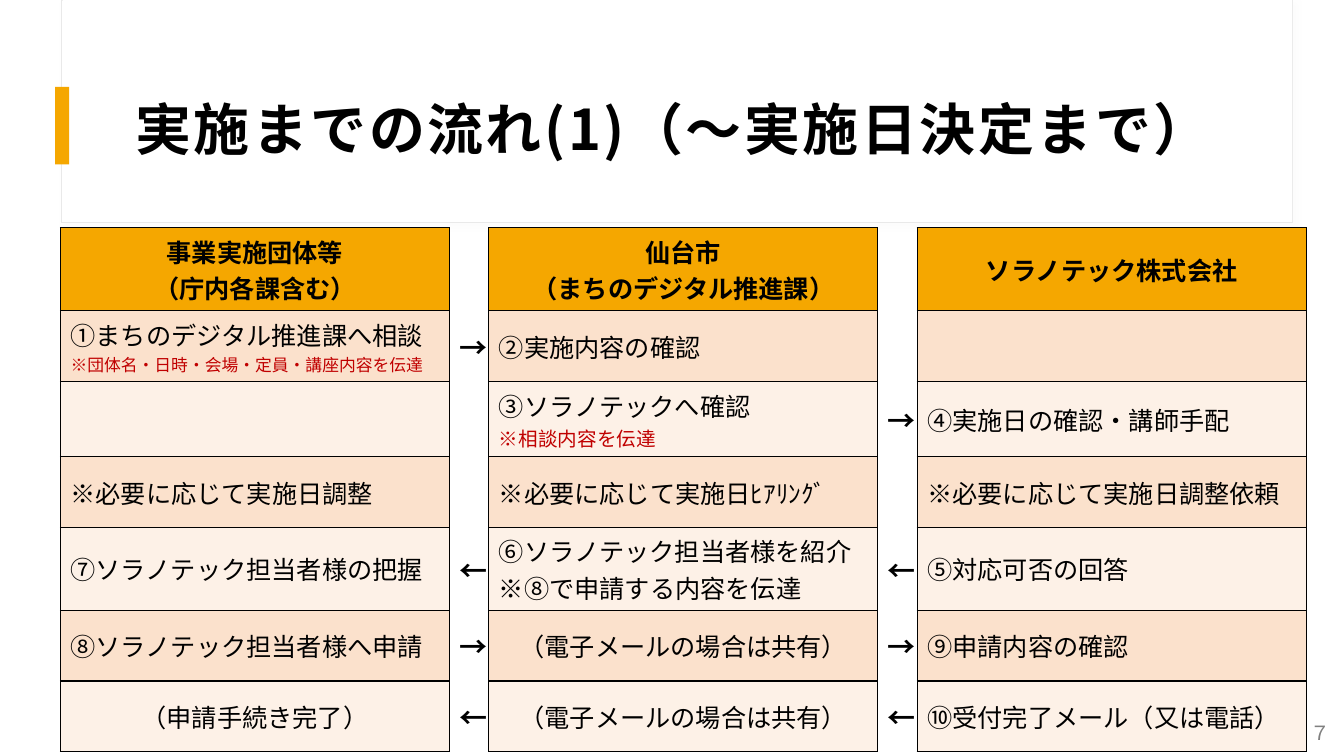
from collections import namedtuple
from dataclasses import dataclass

from lxml import etree
from pptx import Presentation
from pptx.dml.color import RGBColor
from pptx.enum.shapes import MSO_SHAPE
from pptx.enum.text import MSO_ANCHOR, PP_ALIGN
from pptx.oxml.ns import qn
from pptx.util import Pt

RECTANGLE = MSO_SHAPE.RECTANGLE
MIDDLE = MSO_ANCHOR.MIDDLE
LEFT, CENTER, RIGHT = PP_ALIGN.LEFT, PP_ALIGN.CENTER, PP_ALIGN.RIGHT


@dataclass(frozen=True)
class Theme:
    font: str = "Noto Sans CJK JP"
    black: str = "000000"
    white: str = "FFFFFF"
    accent: str = "F5A700"
    band_dark: str = "FBE1CC"
    band_light: str = "FDF1E7"
    note: str = "C00000"
    frame: str = "E9E9E9"
    shadow: str = "D9D9D9"
    page_number: str = "808080"
    title_size: int = 40
    arrow_size: int = 20
    body_size: int = 18
    number_size: int = 14


THEME = Theme()
Box = namedtuple("Box", "left top width height")
Line = namedtuple("Line", "text size color bold align")


def body(text):
    align = CENTER if text.startswith("（") else LEFT
    return Line(text, THEME.body_size, THEME.black, False, align)


def heading(text):
    return Line(text, THEME.body_size, THEME.black, True, CENTER)


def note(text, size):
    return Line(text, size, THEME.note, False, LEFT)


def arrow(text):
    return Line(text, THEME.arrow_size, THEME.black, True, CENTER)


HEADINGS = [
    [heading("事業実施団体等"), heading("（庁内各課含む）")],
    [],
    [heading("仙台市"), heading("（まちのデジタル推進課）")],
    [],
    [heading("ソラノテック株式会社")],
]
STEPS = [
    [[body("①まちのデジタル推進課へ相談"),
      note("※団体名・日時・会場・定員・講座内容を伝達", 12)],
     [arrow("→")], [body("②実施内容の確認")], [], []],
    [[], [], [body("③ソラノテックへ確認"), note("※相談内容を伝達", 14)],
     [arrow("→")], [body("④実施日の確認・講師手配")]],
    [[body("※必要に応じて実施日調整")], [],
     [body("※必要に応じて実施日ﾋｱﾘﾝｸﾞ")], [],
     [body("※必要に応じて実施日調整依頼")]],
    [[body("⑦ソラノテック担当者様の把握")], [arrow("←")],
     [body("⑥ソラノテック担当者様を紹介"), body("※⑧で申請する内容を伝達")],
     [arrow("←")], [body("⑤対応可否の回答")]],
    [[body("⑧ソラノテック担当者様へ申請")], [arrow("→")],
     [body("（電子メールの場合は共有）")], [arrow("→")],
     [body("⑨申請内容の確認")]],
    [[body("（申請手続き完了）")], [arrow("←")],
     [body("（電子メールの場合は共有）")], [arrow("←")],
     [body("⑩受付完了メール（又は電話）")]],
]


def points(box):
    return [Pt(length) for length in box]


def write_lines(frame, lines):
    for index, line in enumerate(lines):
        para = frame.add_paragraph() if index else frame.paragraphs[0]
        para.alignment = line.align
        span = para.add_run()
        span.text = line.text
        span.font.size = Pt(line.size)
        span.font.bold = line.bold
        span.font.color.rgb = RGBColor.from_string(line.color)
        span.font.name = THEME.font
        east_asian = etree.SubElement(span.font._element, qn("a:ea"))
        east_asian.set("typeface", THEME.font)


def add_text(page, box, line, insets):
    frame = page.shapes.add_textbox(*points(box)).text_frame
    frame.word_wrap = True
    frame.vertical_anchor = MIDDLE
    (frame.margin_left, frame.margin_top,
     frame.margin_right, frame.margin_bottom) = points(insets)
    write_lines(frame, [line])
    return frame.paragraphs[0]


def add_block(page, box, fill, outline=None):
    block = page.shapes.add_shape(RECTANGLE, *points(box))
    block.shadow.inherit = False
    block.fill.solid()
    block.fill.fore_color.rgb = RGBColor.from_string(fill)
    if outline:
        block.line.color.rgb = RGBColor.from_string(outline)
        block.line.width = Pt(0.75)
    else:
        block.line.fill.background()
    return block


def cast_shadow(block):
    effects = block._element.spPr.find(qn("a:effectLst"))
    shadow = etree.SubElement(effects, qn("a:outerShdw"), blurRad=str(Pt(4)),
                              dist=str(Pt(3)), dir=str(45 * 60000))
    color = etree.SubElement(shadow, qn("a:srgbClr"), val=THEME.shadow)
    etree.SubElement(color, qn("a:alpha"), val="8000")


def draw_title(page, box):
    # White panel with a faint frame, and the accent bar on its left edge
    cast_shadow(add_block(page, box, THEME.white, THEME.frame))
    add_block(page, Box(box.left + 0.7, box.top, box.width - 0.7,
                        box.height - 0.7), THEME.white)
    add_block(page, Box(box.left - 4.6, box.top + 62, 10, 55.5), THEME.accent)

    # Title text
    line = Line("実施までの流れ(1)（～実施日決定まで）", THEME.title_size,
                THEME.black, True, LEFT)
    para = add_text(page, Box(box.left + 44, box.top + 43, 800.6, 93), line,
                    (8.64, 8.64, 8.64, 7.2))
    para.line_spacing = 1.05
    para.runs[0].font._element.set("spc", "180")


def set_borders(cell, is_gap):
    properties = cell._tc.get_or_add_tcPr()
    for index, side in enumerate("LRTB"):
        border = etree.Element(qn("a:ln" + side), w=str(Pt(1)))
        if is_gap and side in "TB":
            etree.SubElement(border, qn("a:noFill"))
        else:
            fill = etree.SubElement(border, qn("a:solidFill"))
            etree.SubElement(fill, qn("a:srgbClr"), val=THEME.black)
        properties.insert(index, border)


def row_height(row):
    """Fit the tallest cell, with one common height as the minimum."""
    line_ratio, margins, minimum = 1.45, 7.2, 50.4
    tallest = max(sum(line.size for line in lines) for lines in row)
    return max(minimum, tallest * line_ratio + margins)


def draw_flow(page, box):
    rows = [HEADINGS] + STEPS
    columns = len(HEADINGS)
    table = page.shapes.add_table(len(rows), columns, *points(box)).table
    table.first_row = table.horz_banding = False

    # Three wide party columns, with narrow arrow columns between them
    gap = 28.1
    party = (box.width - 2 * gap) / 3
    for index, column in enumerate(table.columns):
        column.width = Pt(gap if index % 2 else party)

    # Cells
    for r, row in enumerate(rows):
        table.rows[r].height = Pt(row_height(row))
        band = THEME.band_dark if r % 2 else THEME.band_light
        for c, lines in enumerate(row):
            cell = table.cell(r, c)
            cell.vertical_anchor = MIDDLE
            is_gap = c % 2 == 1
            if is_gap:
                cell.fill.background()
            else:
                cell.fill.solid()
                cell.fill.fore_color.rgb = RGBColor.from_string(
                    band if r else THEME.accent)
            set_borders(cell, is_gap)
            write_lines(cell.text_frame, lines)


def draw_page_number(page, box):
    add_text(page, box, Line("７", THEME.number_size, THEME.page_number,
                             False, RIGHT), (0, 0, 0, 0))


def main():
    deck = Presentation()
    deck.slide_width, deck.slide_height = Pt(960), Pt(540)
    page = deck.slides.add_slide(deck.slide_layouts[6])
    draw_title(page, Box(44, 0, 879, 159))
    draw_flow(page, Box(43.2, 162.6, 889.9, 374.2))
    draw_page_number(page, Box(856.6, 513.4, 93.6, 20))
    deck.save("out.pptx")


if __name__ == "__main__":
    main()
